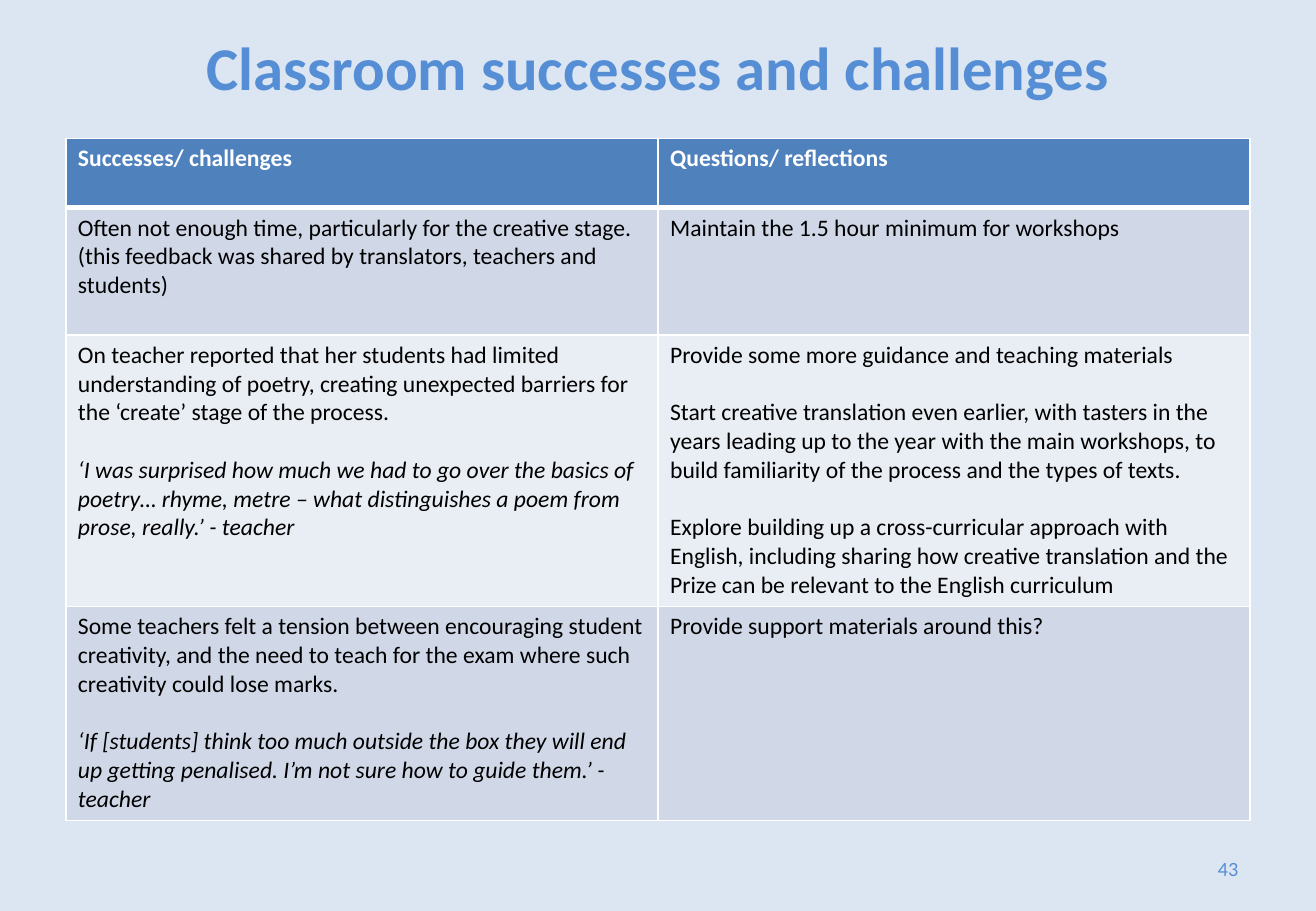
from pptx import Presentation
from pptx.dml.color import RGBColor
from pptx.enum.text import MSO_ANCHOR as Anchor, MSO_AUTO_SIZE as AutoSize, PP_ALIGN as Align
from pptx.oxml.ns import qn
from pptx.util import Pt
from lxml.etree import SubElement

COLOURS = {
    "background": "DCE6F2",
    "accent": "558ED5",
    "header": "4F81BD",
    "odd": "D0D8E8",
    "even": "E9EDF4",
    "white": "FFFFFF",
    "black": "000000",
}
LEFT, WIDTH = 39, 702
PARAGRAPH_GAP = 17

# Each cell is a list of paragraphs; quotes are set in italics
HEADINGS = [["Successes/ challenges"], ["Questions/ reflections"]]
FEEDBACK = [
    [
        ["Often not enough time, particularly for the creative stage. "
         "(this feedback was shared by translators, teachers and students)"],
        ["Maintain the 1.5 hour minimum for workshops"],
    ],
    [
        ["On teacher reported that her students had limited understanding of poetry, "
         "creating unexpected barriers for the ‘create’ stage of the process.",
         "‘I was surprised how much we had to go over the basics of poetry… rhyme, metre – "
         "what distinguishes a poem from prose, really.’ - teacher"],
        ["Provide some more guidance and teaching materials",
         "Start creative translation even earlier, with tasters in the years leading up to "
         "the year with the main workshops, to build familiarity of the process and the "
         "types of texts.",
         "Explore building up a cross-curricular approach with English, including sharing "
         "how creative translation and the Prize can be relevant to the English curriculum"],
    ],
    [
        ["Some teachers felt a tension between encouraging student creativity, and the need "
         "to teach for the exam where such creativity could lose marks.",
         "‘If [students] think too much outside the box they will end up getting penalised. "
         "I’m not sure how to guide them.’ - teacher"],
        ["Provide support materials around this?"],
    ],
]
ROW_HEIGHTS = [41, 75.5, 161, 127]


def colour(name):
    return RGBColor.from_string(COLOURS[name])


class SlideBuilder:
    """Holds the text style and the current slide."""

    font = "Calibri"

    def __init__(self, slide):
        self.slide = slide
        fill = slide.background.fill
        fill.solid()
        fill.fore_color.rgb = colour("background")

    def add_text(self, para, text, size, tint, bold=False, italic=False, align=Align.LEFT):
        para.alignment = align
        span = para.add_run()
        span.text = text
        span.font.name = self.font
        span.font.size = Pt(size)
        span.font.bold = bold
        span.font.italic = italic
        span.font.color.rgb = colour(tint)

    def title(self, text, top, height):
        box = self.slide.shapes.title
        box.left, box.top, box.width, box.height = Pt(LEFT), Pt(top), Pt(WIDTH), Pt(height)
        frame = box.text_frame
        frame.auto_size = AutoSize.NONE
        frame.vertical_anchor = Anchor.MIDDLE
        self.add_text(frame.paragraphs[0], text, 36, "accent", bold=True, align=Align.CENTER)

    def page_number(self, text, left, top, width, height):
        box = self.slide.shapes.add_textbox(Pt(left), Pt(top), Pt(width), Pt(height))
        frame = box.text_frame
        frame.word_wrap = True
        frame.vertical_anchor = Anchor.MIDDLE
        self.add_text(frame.paragraphs[0], text, 12, "accent", align=Align.RIGHT)

    def borders(self, cell, widths):
        properties = cell._tc.get_or_add_tcPr()
        for side, width in widths.items():
            line = SubElement(properties, qn("a:ln" + side), w=str(Pt(width)))
            fill = SubElement(line, qn("a:solidFill"))
            SubElement(fill, qn("a:srgbClr"), val=COLOURS["white"])

    def cell(self, cell, texts, row):
        is_header = row == 0
        self.borders(cell, {
            "L": 1, "R": 1,
            "T": 3 if row == 1 else 1,
            "B": 3 if is_header else 1,
        })
        cell.fill.solid()
        band = "header" if is_header else "odd" if row % 2 else "even"
        cell.fill.fore_color.rgb = colour(band)
        frame = cell.text_frame
        for index, text in enumerate(texts):
            para = frame.add_paragraph() if index else frame.paragraphs[0]
            para.space_before = Pt(PARAGRAPH_GAP if index else 0)
            self.add_text(para, text, 14, "white" if is_header else "black",
                          bold=is_header, italic=text.startswith("‘"))

    def table(self, rows, heights, top):
        columns = len(rows[0])
        table = self.slide.shapes.add_table(
            len(rows), columns, Pt(LEFT), Pt(top), Pt(WIDTH), Pt(sum(heights))).table
        for column in table.columns:
            column.width = Pt(WIDTH / columns)
        for row, (texts, height) in enumerate(zip(rows, heights)):
            table.rows[row].height = Pt(height)
            for column, cell_texts in enumerate(texts):
                self.cell(table.cell(row, column), cell_texts, row)


def main():
    deck = Presentation()
    deck.slide_width, deck.slide_height = Pt(780), Pt(540)
    page = SlideBuilder(deck.slides.add_slide(deck.slide_layouts[5]))

    # Heading
    page.title("Classroom successes and challenges", 3.6, 71)
    # Page number
    page.page_number("43", 559, 500.5, 182, 29)
    # Feedback table
    page.table([HEADINGS, *FEEDBACK], ROW_HEIGHTS, 82)

    deck.save("out.pptx")


if __name__ == "__main__":
    main()
